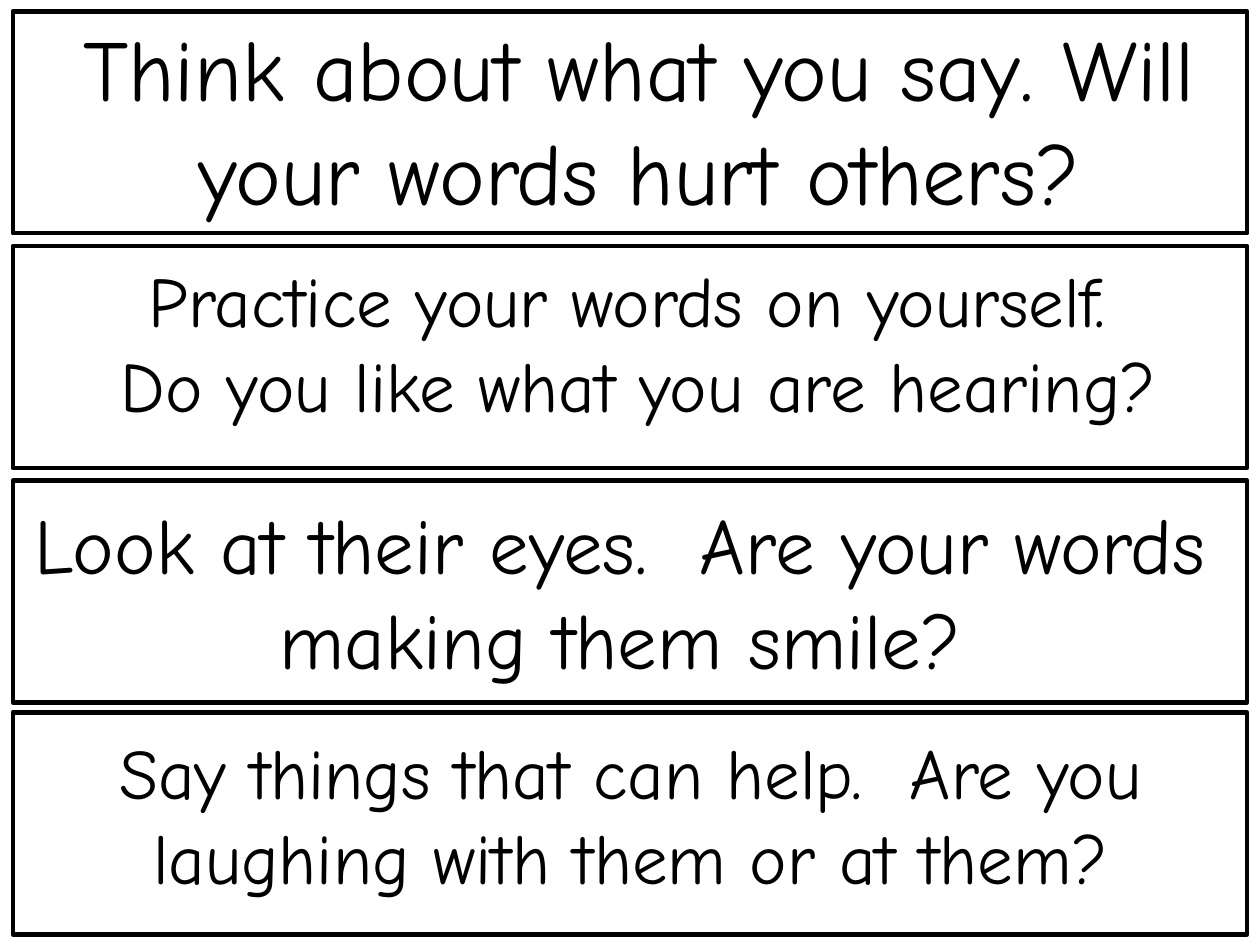
from pptx import Presentation
from pptx.dml.color import RGBColor
from pptx.enum.shapes import MSO_SHAPE
from pptx.enum.text import MSO_AUTO_SIZE, PP_ALIGN
from pptx.util import Inches, Pt

RECTANGLE = MSO_SHAPE.RECTANGLE
CENTER = PP_ALIGN.CENTER
GROW = MSO_AUTO_SIZE.SHAPE_TO_FIT_TEXT
BLANK_LAYOUT = 6

FONT = "Comic Neue"
COLORS = {"paper": "FFFFFF", "ink": "000000"}

STRIP_LEFT, STRIP_WIDTH, STRIP_HEIGHT = 0.18, 17.42, 3.13
STRIP_TOPS = (0.16, 3.47, 6.78, 10.05)

# Message, text size, then left, top, width and height
MESSAGES = (
    ("Think about what you say. Will your words hurt others?",
     88, (0.6, 0.16, 16.83, 3.06)),
    ("Practice your words on yourself. \nDo you like what you are hearing?",
     72, (0, 3.57, 18.02, 2.52)),
    ("Look at their eyes.  Are your words making them smile?",
     80, (-0.09, 6.95, 17.69, 2.79)),
    ("Say things that can help.  Are you laughing with them or at them?",
     72, (0.48, 10.23, 16.83, 2.52)),
)


def color(name):
    return RGBColor.from_string(COLORS[name])


def add_strip(slide, top):
    """Add one bordered card strip across the slide."""
    strip = slide.shapes.add_shape(
        RECTANGLE, Inches(STRIP_LEFT), Inches(top),
        Inches(STRIP_WIDTH), Inches(STRIP_HEIGHT))
    strip.shadow.inherit = False
    strip.fill.solid()
    strip.fill.fore_color.rgb = color("paper")
    strip.line.color.rgb = color("ink")
    strip.line.width = Pt(4.5)


def add_message(slide, message, size, box):
    frame = slide.shapes.add_textbox(*map(Inches, box)).text_frame
    frame.word_wrap = True
    frame.auto_size = GROW
    frame.text = message
    for paragraph in frame.paragraphs:
        paragraph.alignment = CENTER
        for run in paragraph.runs:
            run.font.name = FONT
            run.font.size = Pt(size)
            run.font.color.rgb = color("ink")


def main():
    presentation = Presentation()
    presentation.slide_width = Inches(17.78)
    presentation.slide_height = Inches(13.33)
    slide = presentation.slides.add_slide(
        presentation.slide_layouts[BLANK_LAYOUT])
    for top in STRIP_TOPS:
        add_strip(slide, top)
    for message, size, box in MESSAGES:
        add_message(slide, message, size, box)
    presentation.save("out.pptx")


if __name__ == "__main__":
    main()
